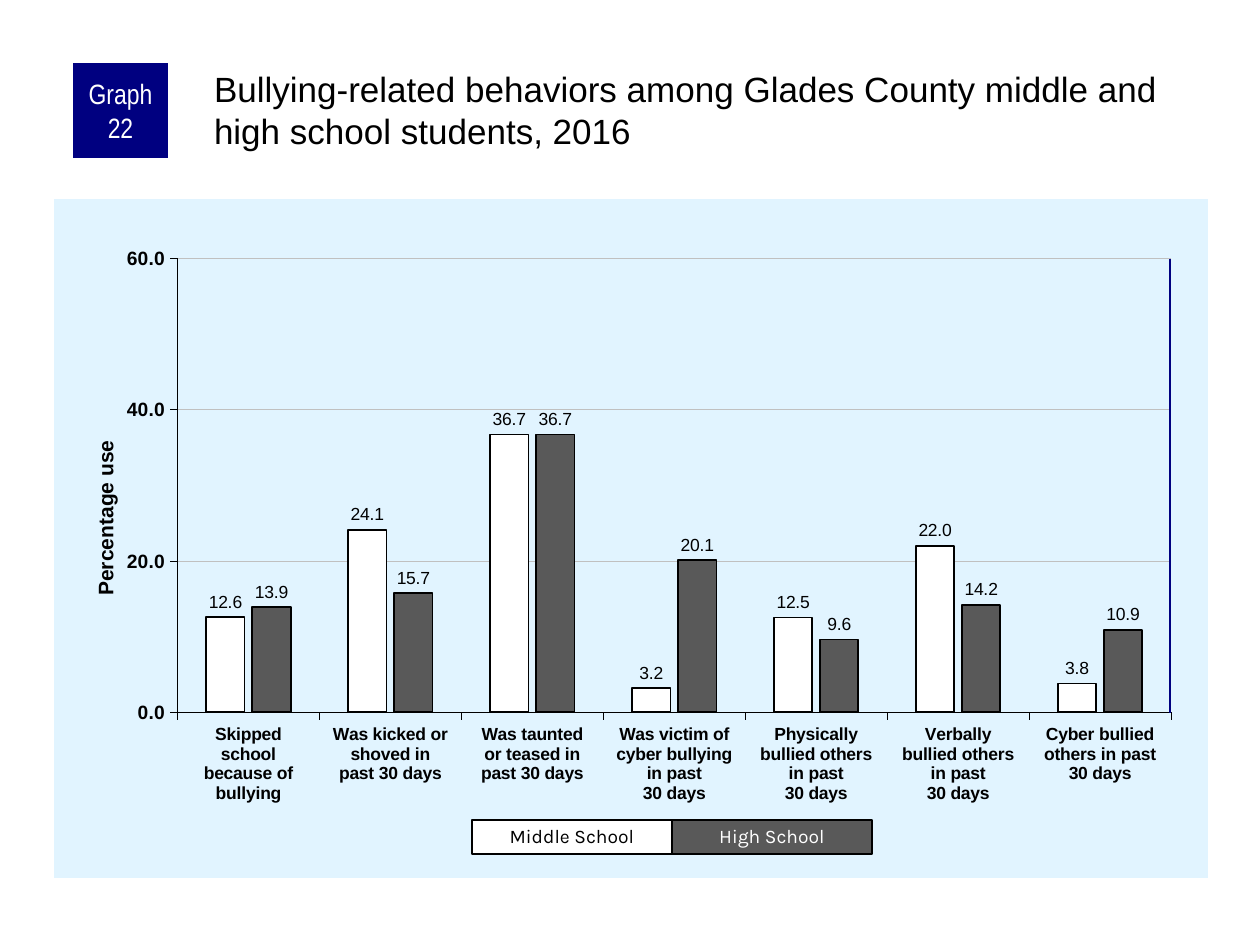
import lxml.etree
import pptx
import pptx.chart.data
import pptx.dml.color
import pptx.enum.chart
import pptx.enum.shapes
import pptx.enum.text
import pptx.oxml
import pptx.oxml.ns
import pptx.util

PX = 914400 / 126
COLORS = {
    "black": "000000", "white": "FFFFFF", "navy": "000080",
    "panel": "E1F4FF", "grid": "C0C0C0", "gray": "595959",
}
CATEGORIES = [
    "Skipped\nschool\nbecause of\nbullying",
    "Was kicked or\nshoved in\npast 30 days",
    "Was taunted\nor teased in\npast 30 days",
    "Was victim of\ncyber bullying\nin past\n30 days",
    "Physically\nbullied others\nin past\n30 days",
    "Verbally\nbullied others\nin past\n30 days",
    "Cyber bullied\nothers in past\n30 days",
]
SCHOOLS = [
    ("Middle School", "white", "black", [12.6, 24.1, 36.7, 3.2, 12.5, 22.0, 3.8]),
    ("High School", "gray", "white", [13.9, 15.7, 36.7, 20.1, 9.6, 14.2, 10.9]),
]


def px(*lengths):
    return [pptx.util.Emu(round(length * PX)) for length in lengths]


def rgb(name):
    return pptx.dml.color.RGBColor.from_string(COLORS[name])


def set_font(font, size, color="black", name="Arial", bold=False):
    font.size = pptx.util.Pt(size)
    font.color.rgb = rgb(color)
    font.name = name
    font.bold = bold


def set_line(line, color, width):
    line.color.rgb = rgb(color)
    line.width = pptx.util.Pt(width)


def set_fill(fill, color):
    fill.solid()
    fill.fore_color.rgb = rgb(color)


def set_insets(frame, left, top, right, bottom):
    (frame.margin_left, frame.margin_top,
     frame.margin_right, frame.margin_bottom) = px(left, top, right, bottom)


def set_layout(parent, index, **places):
    """Give a chart part a manual place, in fractions of the chart."""
    tag = pptx.oxml.ns.qn("c:layout")
    for old in parent.findall(tag):
        parent.remove(old)
    layout = lxml.etree.Element(tag)
    manual = lxml.etree.SubElement(layout, pptx.oxml.ns.qn("c:manualLayout"))
    for name, value in places.items():
        lxml.etree.SubElement(manual, pptx.oxml.ns.qn("c:" + name), val=str(value))
    parent.insert(index, layout)


def add_title(page, text):
    title = page.shapes.title
    title.left, title.top, title.width, title.height = px(210, 63, 998, 105)
    frame = title.text_frame
    frame.text = text
    frame.word_wrap = True
    frame.auto_size = pptx.enum.text.MSO_AUTO_SIZE.NONE
    frame.vertical_anchor = pptx.enum.text.MSO_ANCHOR.TOP
    set_insets(frame, 4, 4, 0, 0)
    para = frame.paragraphs[0]
    para.alignment = pptx.enum.text.PP_ALIGN.LEFT
    set_font(para.font, 20)


def add_label(page, place, text, fill, size, color, font_name):
    """Add a filled rectangle with centred text; return it."""
    box = page.shapes.add_shape(pptx.enum.shapes.MSO_SHAPE.RECTANGLE, *px(*place))
    box.shadow.inherit = False
    set_fill(box.fill, fill)
    box.line.fill.background()
    frame = box.text_frame
    frame.text = text
    frame.word_wrap = True
    frame.vertical_anchor = pptx.enum.text.MSO_ANCHOR.MIDDLE
    set_insets(frame, 6, 0, 6, 0)
    para = frame.paragraphs[0]
    para.alignment = pptx.enum.text.PP_ALIGN.CENTER
    set_font(para.font, size, color, font_name)
    return box


def add_legend(page):
    for index, (school, fill, color, _) in enumerate(SCHOOLS):
        box = add_label(page, (472 + 200 * index, 820, 200, 34),
                        school, fill, 11, color, "Karla")
        set_line(box.line, "black", 0.75)
        box.text_frame.paragraphs[0].line_spacing = 0.9


def add_plot_edge(page):
    edge = page.shapes.add_connector(
        pptx.enum.shapes.MSO_CONNECTOR.STRAIGHT, *px(1170, 259, 1170, 713))
    set_line(edge.line, "navy", 1)
    properties = edge.element.find(pptx.oxml.ns.qn("p:spPr"))
    lxml.etree.SubElement(properties, pptx.oxml.ns.qn("a:effectLst"))


def format_axis(axis, size):
    axis.major_tick_mark = pptx.enum.chart.XL_TICK_MARK.OUTSIDE
    axis.minor_tick_mark = pptx.enum.chart.XL_TICK_MARK.NONE
    set_font(axis.tick_labels.font, size, bold=True)
    set_line(axis.format.line, "black", 0.25)


def format_value_axis(axis):
    format_axis(axis, 11)
    axis.minimum_scale, axis.maximum_scale, axis.major_unit = 0, 60, 20
    axis.tick_labels.number_format = "0.0"
    axis.tick_labels.number_format_is_linked = False
    axis.has_major_gridlines = True
    set_line(axis.major_gridlines.format.line, "grid", 0.25)
    frame = axis.axis_title.text_frame
    frame.text = "Percentage use"
    set_font(frame.paragraphs[0].font, 12, bold=True)
    set_layout(axis.axis_title.element, 1, xMode="edge", yMode="edge", x=0.03, y=0.35)


def format_series(series, color):
    set_fill(series.format.fill, color)
    set_line(series.format.line, "black", 1)
    series.invert_if_negative = False
    labels = series.data_labels
    labels.show_value = True
    labels.number_format = "0.0"
    labels.number_format_is_linked = False
    labels.position = pptx.enum.chart.XL_LABEL_POSITION.OUTSIDE_END
    set_font(labels.font, 10)


def fill_chart_area(chart, color):
    area = pptx.oxml.parse_xml(
        f'<c:spPr {pptx.oxml.ns.nsdecls("c", "a")}><a:solidFill>'
        f'<a:srgbClr val="{COLORS[color]}"/></a:solidFill>'
        '<a:ln><a:noFill/></a:ln></c:spPr>')
    chart.element.find(pptx.oxml.ns.qn("c:chart")).addnext(area)


def add_behavior_chart(page):
    data = pptx.chart.data.CategoryChartData(number_format="0.0")
    data.categories = CATEGORIES
    for index, (_, _, _, values) in enumerate(SCHOOLS, 1):
        data.add_series(f"Series {index}", values)
    chart = page.shapes.add_chart(
        pptx.enum.chart.XL_CHART_TYPE.COLUMN_CLUSTERED,
        *px(54, 199, 1154, 679), data).chart
    chart.has_legend = False
    chart.has_title = False
    set_font(chart.font, 11.5)
    fill_chart_area(chart, "panel")
    plot = chart.plots[0]
    plot.gap_width, plot.overlap = 150, -20
    plot.vary_by_categories = False
    for series, (_, fill, _, _) in zip(plot.series, SCHOOLS):
        format_series(series, fill)
    format_axis(chart.category_axis, 10)
    format_value_axis(chart.value_axis)
    plot_area = chart.element.find(".//" + pptx.oxml.ns.qn("c:plotArea"))
    set_layout(plot_area, 0, layoutTarget="inner", xMode="edge", yMode="edge",
               x=0.107, y=0.087, w=0.861, h=0.669)


def main():
    deck = pptx.Presentation()
    deck.slide_width, deck.slide_height = px(1260, 945)
    page = deck.slides.add_slide(deck.slide_layouts[5])
    add_behavior_chart(page)
    add_plot_edge(page)
    add_label(page, (73, 63, 95, 95), "Graph 22", "navy", 16, "white", "Arial Narrow")
    add_title(page, "Bullying-related behaviors among Glades County middle "
                    "and high school students, 2016")
    add_legend(page)
    deck.save("out.pptx")


if __name__ == "__main__":
    main()
